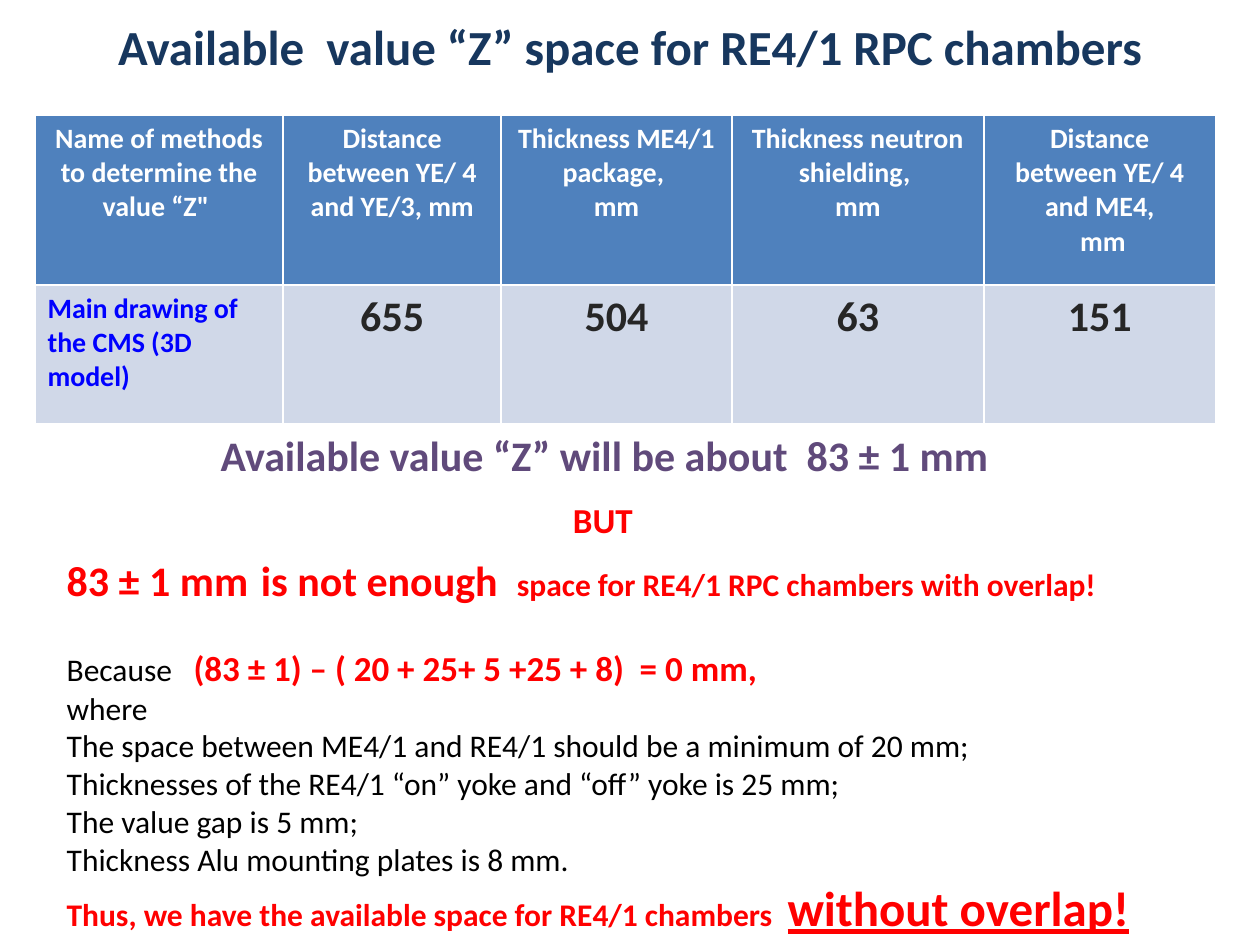
import pptx
import pptx.util
from pptx.dml.color import RGBColor
from pptx.enum.text import MSO_ANCHOR, MSO_AUTO_SIZE, PP_ALIGN

Pt = pptx.util.Pt

NAVY = RGBColor(0x17, 0x37, 0x5E)
HEADER_BLUE = RGBColor(0x4F, 0x81, 0xBD)
ROW_BLUE = RGBColor(0xD0, 0xD8, 0xE8)
LINK_BLUE = RGBColor(0x00, 0x00, 0xFF)
PURPLE = RGBColor(0x60, 0x4A, 0x7B)
RED = RGBColor(0xFF, 0x00, 0x00)
CHARCOAL = RGBColor(0x26, 0x26, 0x26)
BLACK = RGBColor(0x00, 0x00, 0x00)
WHITE = RGBColor(0xFF, 0xFF, 0xFF)

LEFT, CENTER = PP_ALIGN.LEFT, PP_ALIGN.CENTER

# Text formats: size in points, colour, bold
TITLE = dict(size=28, color=NAVY, bold=True)
HEADER = dict(size=16, color=WHITE, bold=True)
METHOD = dict(size=16, color=LINK_BLUE, bold=True)
VALUE = dict(size=24, color=CHARCOAL, bold=True)
RESULT = dict(size=24, color=PURPLE, bold=True)
PLAIN = dict(size=18, color=BLACK, bold=False)
WARNING = dict(size=18, color=RED, bold=True)
FORMULA = dict(WARNING, size=20)
STRONG = dict(WARNING, size=24)
WIDE_GAP = dict(WARNING, size=32)
CONCLUSION = dict(WARNING, size=28, underline=True)

# A paragraph is (alignment, points before, [(text, format), ...])
title = [(CENTER, 0, [("Available  value “Z” space for RE4/1 RPC chambers", TITLE)])]
headers = [
    ["Name of methods to determine the value “Z\" "],
    ["Distance between YE/ 4 and YE/3, mm"],
    ["Thickness ME4/1 package, ", "mm"],
    ["Thickness neutron shielding, ", "mm"],
    ["Distance between YE/ 4 and ME4,", " mm"],
]
method = "Main drawing of  the CMS (3D model)"
distances = ["655", "504", "63", "151"]
column_widths = [141.8, 124.6, 131.8, 144, 132.5]
row_heights = [97, 79]

result = [(LEFT, 0, [("Available value “Z” will be about  83 ± 1 mm", RESULT)])]
assumptions = [
    "where",
    "The space between ME4/1 and RE4/1 should be a minimum of 20 mm;",
    "Thicknesses of the RE4/1 “on” yoke and “off” yoke is 25 mm;",
    "The value gap is 5 mm;",
    "Thickness Alu mounting plates is 8 mm.",
]
reasoning = [
    (CENTER, 0, [("BUT", FORMULA)]),
    (LEFT, 0, [
        ("83 ± 1 mm", STRONG),
        (" ", WIDE_GAP),
        ("is not enough  ", STRONG),
        ("space for RE4/1 RPC chambers with overlap!", WARNING),
    ]),
    (LEFT, 22, [
        ("Because   ", PLAIN),
        ("(83 ± 1) – ( 20 + 25+ 5 +25 + 8)  = 0 mm,", FORMULA),
    ]),
    *[(LEFT, 0, [(line, PLAIN)]) for line in assumptions],
    (LEFT, 0, [
        ("Thus, we have the available space for RE4/1 chambers  ", WARNING),
        ("without overlap!", CONCLUSION),
    ]),
]


def write(frame, paragraphs):
    for index, (alignment, before, runs) in enumerate(paragraphs):
        paragraph = frame.paragraphs[0] if index == 0 else frame.add_paragraph()
        paragraph.alignment = alignment
        paragraph.space_before = Pt(before)
        for text, style in runs:
            run = paragraph.add_run()
            run.text = text
            run.font.name = "Calibri"
            for key, value in style.items():
                if key == "color":
                    run.font.color.rgb = value
                else:
                    setattr(run.font, key, Pt(value) if key == "size" else value)


def add_text(slide, box, paragraphs):
    frame = slide.shapes.add_textbox(*map(Pt, box)).text_frame
    frame.word_wrap = False
    frame.auto_size = MSO_AUTO_SIZE.NONE
    write(frame, paragraphs)


def add_distances(slide, left, top):
    rows = [
        [[(CENTER, 0, [(line, HEADER)]) for line in lines] for lines in headers],
        [[(LEFT, 0, [(method, METHOD)])]]
        + [[(CENTER, 0, [(distance, VALUE)])] for distance in distances],
    ]
    table = slide.shapes.add_table(
        len(rows), len(headers), Pt(left), Pt(top),
        Pt(sum(column_widths)), Pt(sum(row_heights))).table
    for column, width in zip(table.columns, column_widths):
        column.width = Pt(width)
    for row, height, fill, cells in zip(
            table.rows, row_heights, (HEADER_BLUE, ROW_BLUE), rows):
        row.height = Pt(height)
        for cell, paragraphs in zip(row.cells, cells):
            cell.fill.solid()
            cell.fill.fore_color.rgb = fill
            write(cell.text_frame, paragraphs)


def main():
    deck = pptx.Presentation()
    deck.slide_width, deck.slide_height = Pt(720), Pt(540)
    slide = deck.slides.add_slide(deck.slide_layouts[5])

    heading = slide.shapes.title
    heading.left, heading.top, heading.width, heading.height = map(
        Pt, (54, -8, 612, 68))
    heading.text_frame.vertical_anchor = MSO_ANCHOR.MIDDLE
    write(heading.text_frame, title)

    add_distances(slide, 20, 66)
    add_text(slide, (119, 242, 474, 36), result)
    add_text(slide, (31, 281.5, 627, 307.5), reasoning)
    deck.save("out.pptx")


if __name__ == "__main__":
    main()
